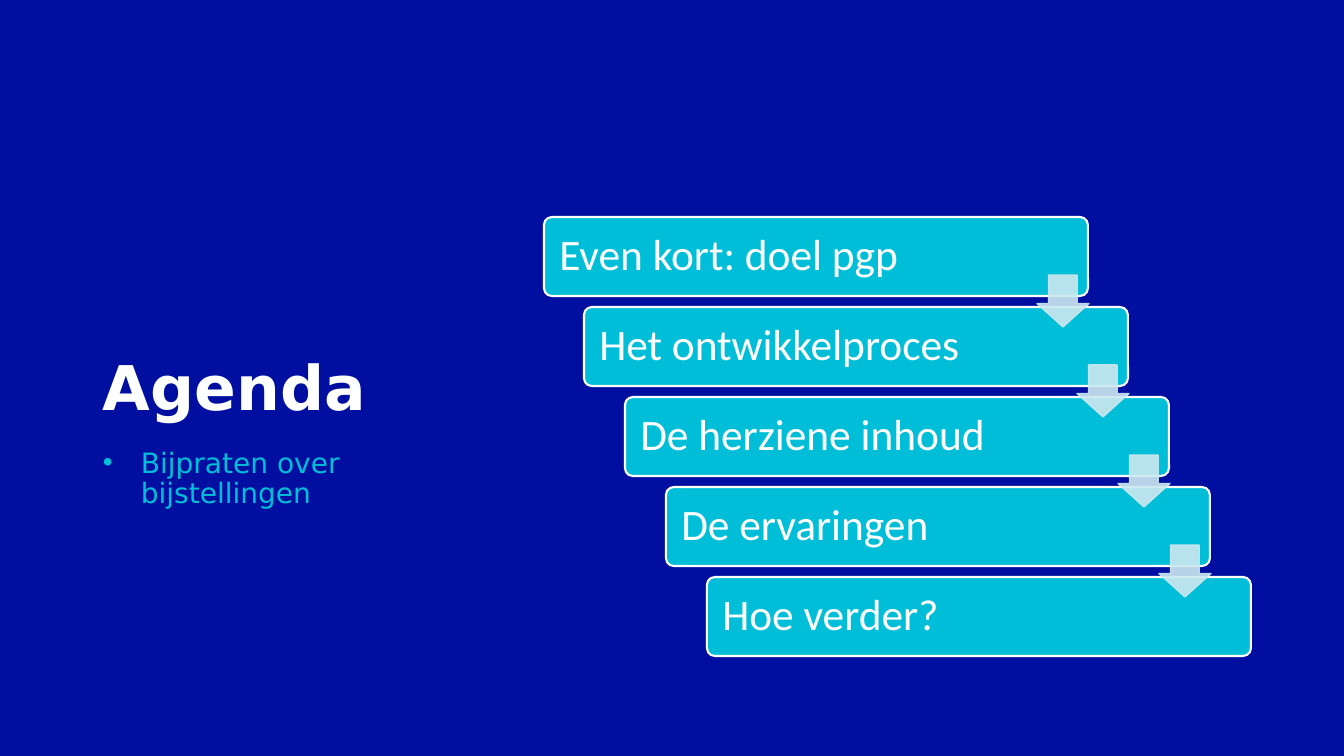
from lxml import etree
from pptx import Presentation
from pptx.dml.color import RGBColor
from pptx.enum.shapes import MSO_SHAPE as SHAPE
from pptx.enum.text import MSO_ANCHOR as ANCHOR, PP_ALIGN as ALIGN
from pptx.oxml.ns import qn
from pptx.util import Pt

SLIDE_W, SLIDE_H = 1344, 756
EMU_PER_PX = 12192000 / SLIDE_W

NAVY, WHITE, CYAN, PALE = "000FA0", "FEFFFF", "00BED7", "CCE8F0"
STEPS = ["Even kort: doel pgp", "Het ontwikkelproces", "De herziene inhoud",
         "De ervaringen", "Hoe verder?"]


def px(n):
    return round(n * EMU_PER_PX)


def rgb(color):
    return RGBColor.from_string(color)


def add_text(tf, text, size, color, font, bold=False, anchor=ANCHOR.TOP, bullet_indent=0):
    tf.word_wrap = True
    tf.vertical_anchor = anchor
    p = tf.paragraphs[0]
    p.alignment = ALIGN.LEFT
    p.line_spacing = 0.9
    if bullet_indent:
        pPr = p._p.get_or_add_pPr()
        pPr.set("marL", str(px(bullet_indent)))
        pPr.set("indent", str(-px(bullet_indent)))
        etree.SubElement(pPr, qn("a:buFont")).set("typeface", "Arial")
        etree.SubElement(pPr, qn("a:buChar")).set("char", "•")
    r = p.add_run()
    r.text = text
    r.font.size, r.font.bold, r.font.name = Pt(size), bold, font
    r.font.color.rgb = rgb(color)


def add_box(slide, kind, x, y, w, h, fill, line, line_pt, adjustments=()):
    sp = slide.shapes.add_shape(kind, px(x), px(y), px(w), px(h))
    sp.shadow.inherit = False
    sp.fill.solid()
    sp.fill.fore_color.rgb = rgb(fill)
    sp.line.color.rgb = rgb(line)
    sp.line.width = Pt(line_pt)
    for i, value in enumerate(adjustments):
        sp.adjustments[i] = value
    return sp


def set_opacity(sp, percent):
    for clr in sp._element.spPr.iter(qn("a:srgbClr")):
        etree.SubElement(clr, qn("a:alpha")).set("val", str(percent * 1000))


def add_heading(slide, x, y, w, h):
    # Title above, bullet below, in two boxes of equal height
    gap = 15
    box_h = (h - gap) // 2
    title = slide.shapes.add_textbox(px(x), px(y), px(w), px(box_h))
    add_text(title.text_frame, "Agenda", 44, WHITE, "DejaVu Sans", bold=True,
             anchor=ANCHOR.BOTTOM)
    body = slide.shapes.add_textbox(px(x), px(y + box_h + gap), px(w), px(box_h))
    add_text(body.text_frame, "Bijpraten over bijstellingen", 20, CYAN, "DejaVu Sans",
             bullet_indent=38)


def add_staircase(slide, x, y, w, h, steps):
    step_w, step_h, arrow = 544, 79, 52
    last = len(steps) - 1
    places = [(x + (w - step_w) * i // last, y + (h - step_h) * i // last)
              for i in range(len(steps))]

    # Steps
    for text, (left, top) in zip(steps, places):
        sp = add_box(slide, SHAPE.ROUNDED_RECTANGLE, left, top, step_w, step_h,
                     CYAN, WHITE, 1.5, [0.1])
        tf = sp.text_frame
        tf.margin_left, tf.margin_right = px(13), px(90)
        add_text(tf, text, 31, WHITE, "Calibri", anchor=ANCHOR.MIDDLE)

    # Arrows from each step to the next
    for left, top in places[:-1]:
        sp = add_box(slide, SHAPE.DOWN_ARROW, left + step_w - arrow + 1, top + 58,
                     arrow, arrow, PALE, PALE, 1, [0.55, 0.45])
        set_opacity(sp, 90)


def main():
    prs = Presentation()
    prs.slide_width, prs.slide_height = px(SLIDE_W), px(SLIDE_H)
    slide = prs.slides.add_slide(prs.slide_layouts[6])
    slide.background.fill.solid()
    slide.background.fill.fore_color.rgb = rgb(NAVY)
    add_heading(slide, 93, 217, 410, 439)
    add_staircase(slide, 544, 217, 707, 439, STEPS)
    prs.save("out.pptx")


if __name__ == "__main__":
    main()
